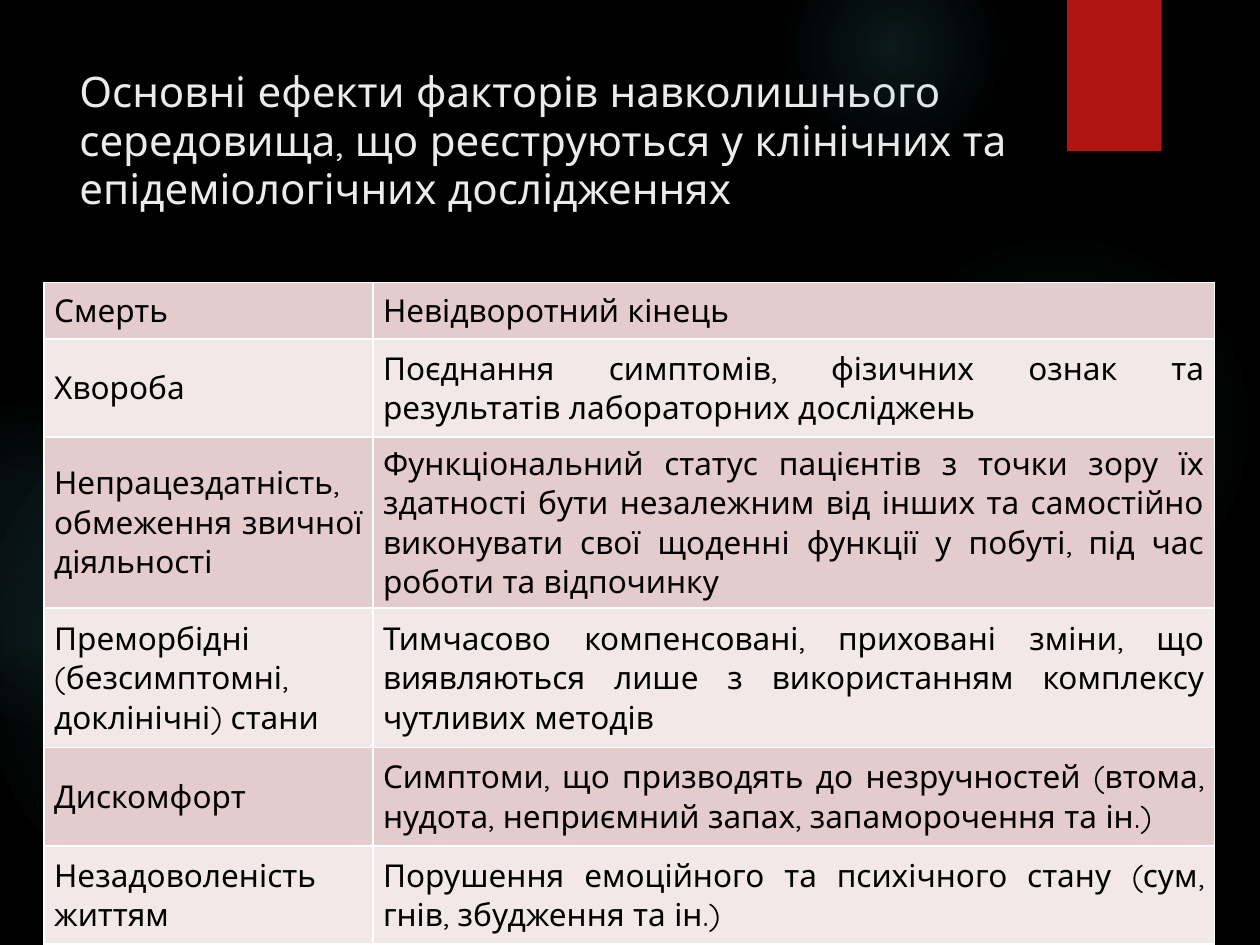
from pptx import Presentation, util as u
from pptx.dml.color import RGBColor
from pptx.enum import shapes, text
from pptx.oxml import parse_xml
from pptx.oxml.ns import nsdecls, qn

UNIT = u.Inches(10) / 120  # the slide is a grid of 120 columns by 90 rows
GLOW = "50B9C1"

TITLE = ("Основні ефекти факторів навколишнього середовища, "
         "що реєструються у клінічних та епідеміологічних дослідженнях")

# left, top, diameter, then (position %, opacity %) from the centre outwards
GLOWS = [
    (82.67, 22, 37, [(0, 7), (36, 6), (69, 0)]),
    (74.67, -6, 21, [(0, 14), (36, 7), (73, 0)]),
    (82.67, 80, 13, [(0, 9), (36, 5), (66, 0)]),
    (-2, 35, 55, [(0, 11), (36, 10), (75, 0)]),
    (-11, 38, 31, [(0, 8), (36, 8), (72, 0)]),
]

# row height, effect, description
EFFECTS = [
    (5.4, "Смерть", "Невідворотний кінець"),
    (9.36, "Хвороба",
     "Поєднання симптомів, фізичних ознак та результатів лабораторних досліджень"),
    (13.32, "Непрацездатність,\nобмеження звичної діяльності",
     "Функціональний статус пацієнтів з точки зору їх здатності бути незалежним від "
     "інших та самостійно виконувати свої щоденні функції у побуті, під час роботи "
     "та відпочинку"),
    (13.32, "Преморбідні (безсимптомні, доклінічні) стани",
     "Тимчасово компенсовані, приховані зміни, що виявляються лише з використанням "
     "комплексу чутливих методів"),
    (9.36, "Дискомфорт",
     "Симптоми, що призводять до незручностей (втома, нудота, неприємний запах, "
     "запаморочення та ін.)"),
    (9.36, "Незадоволеність життям",
     "Порушення емоційного та психічного стану (сум, гнів, збудження та ін.)"),
]


def color(hex_value):
    return RGBColor.from_string(hex_value)


def grid(*lengths):
    return [u.Emu(round(n * UNIT)) for n in lengths]


def set_all(target, values):
    for name, value in values.items():
        setattr(target, name, value)


class Deck:
    font = "Quicksand"
    bands = ("E4CCCC", "F2E8E7")
    cell_format = {
        "vertical_anchor": text.MSO_ANCHOR.MIDDLE,
        "margin_left": u.Inches(0.08), "margin_right": u.Inches(0.08),
        "margin_top": u.Inches(0.05), "margin_bottom": u.Inches(0.05),
    }

    def __init__(self):
        self.prs = Presentation()
        self.prs.slide_width, self.prs.slide_height = grid(120, 90)

    def add_slide(self, background):
        self.slide = self.prs.slides.add_slide(self.prs.slide_layouts[5])
        self.slide.background.fill.solid()
        self.slide.background.fill.fore_color.rgb = color(background)

    def fill_text(self, frame, content, size, ink, **paragraph_format):
        frame.text = content
        for paragraph in frame.paragraphs:
            set_all(paragraph, paragraph_format)
            set_all(paragraph.font, {"name": self.font, "size": u.Pt(size)})
            paragraph.font.color.rgb = color(ink)

    def title(self, content, *box):
        title = self.slide.shapes.title
        set_all(title, dict(zip(("left", "top", "width", "height"), grid(*box))))
        set_all(title.text_frame, {"word_wrap": True,
                                   "vertical_anchor": text.MSO_ANCHOR.TOP,
                                   "auto_size": text.MSO_AUTO_SIZE.NONE})
        self.fill_text(title.text_frame, content, 24, "EBEBEB",
                       alignment=text.PP_ALIGN.LEFT, line_spacing=0.96)

    def shape(self, kind, *box):
        shape = self.slide.shapes.add_shape(kind, *grid(*box))
        shape.shadow.inherit = False
        shape.line.fill.background()
        return shape

    def block(self, fill, *box):
        block = self.shape(shapes.MSO_SHAPE.RECTANGLE, *box)
        block.fill.solid()
        block.fill.fore_color.rgb = color(fill)

    def glow(self, left, top, diameter, stops):
        """Disc that fades out from its centre."""
        disc = self.shape(shapes.MSO_SHAPE.OVAL, left, top, diameter, diameter)
        disc.fill.background()
        stop_xml = "".join(
            f'<a:gs pos="{position * 1000}"><a:srgbClr val="{GLOW}">'
            f'<a:alpha val="{opacity * 1000}"/></a:srgbClr></a:gs>'
            for position, opacity in stops)
        gradient = parse_xml(
            f'<a:gradFill {nsdecls("a")} rotWithShape="1"><a:gsLst>{stop_xml}</a:gsLst>'
            '<a:path path="circle"><a:fillToRect l="50000" t="50000" r="50000" b="50000"/>'
            '</a:path></a:gradFill>')
        properties = disc.element.spPr
        properties.replace(properties.find(qn("a:noFill")), gradient)

    def borders(self, cell, ink, points):
        properties = cell._tc.get_or_add_tcPr()
        for index, side in enumerate("LRTB"):
            properties.insert(index, parse_xml(
                f'<a:ln{side} {nsdecls("a")} w="{u.Pt(points)}"><a:solidFill>'
                f'<a:srgbClr val="{ink}"/></a:solidFill></a:ln{side}>'))

    def table(self, rows, left, top, widths):
        heights = [row[0] for row in rows]
        table = self.slide.shapes.add_table(
            len(rows), len(widths), *grid(left, top, sum(widths), sum(heights))).table
        for column, width in zip(table.columns, grid(*widths)):
            column.width = width
        for index, (height, *contents) in enumerate(rows):
            table.rows[index].height = grid(height)[0]
            for cell, content in zip(table.rows[index].cells, contents):
                set_all(cell, self.cell_format)
                cell.fill.solid()
                cell.fill.fore_color.rgb = color(self.bands[index % 2])
                self.borders(cell, "FFFFFF", 1)
                self.fill_text(cell.text_frame, content, 18, "000000",
                               alignment=text.PP_ALIGN.JUSTIFY)


def main():
    deck = Deck()
    deck.add_slide("000000")
    for glow in GLOWS:
        deck.glow(*glow)
    deck.block("B01513", 101.64, 0, 9, 14.4)
    deck.title(TITLE, 6.36, 6, 92.64, 18.36)
    deck.table(EFFECTS, 4.2, 26.88, (31.32, 80.16))
    deck.prs.save("out.pptx")


if __name__ == "__main__":
    main()
